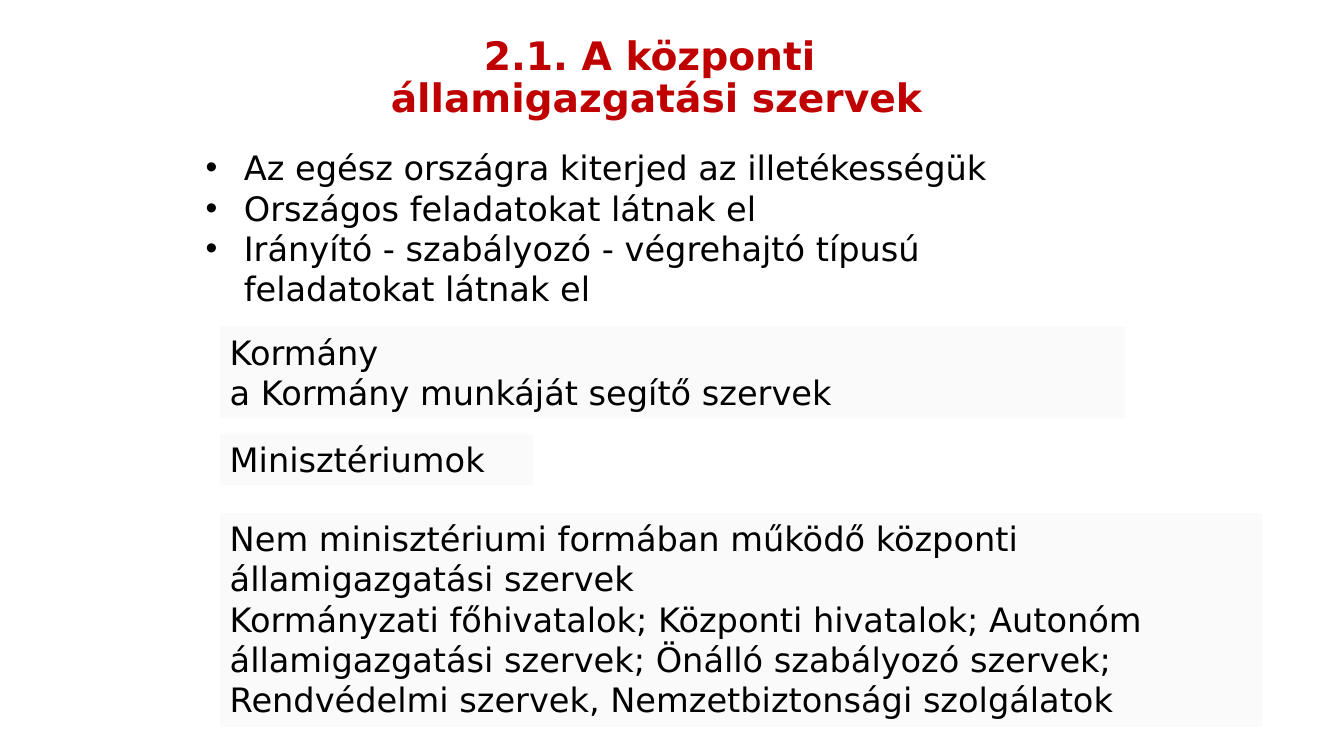
from lxml import etree
from pptx import Presentation
from pptx.dml.color import RGBColor
from pptx.enum.shapes import MSO_SHAPE
from pptx.enum.text import MSO_ANCHOR, MSO_AUTO_SIZE, PP_ALIGN
from pptx.oxml.ns import qn
from pptx.util import Inches, Pt

RECT = MSO_SHAPE.RECTANGLE
TOP, MIDDLE = MSO_ANCHOR.TOP, MSO_ANCHOR.MIDDLE
GROW = MSO_AUTO_SIZE.SHAPE_TO_FIT_TEXT
LEFT, CENTER = PP_ALIGN.LEFT, PP_ALIGN.CENTER
FONT = "DejaVu Sans"
RED, BLACK, PANEL = "C00000", "000000", "FAFAFA"

TITLE = ["2.1. A központi ", "államigazgatási szervek"]
FEATURES = [
    "Az egész országra kiterjed az illetékességük",
    "Országos feladatokat látnak el",
    "Irányító - szabályozó - végrehajtó típusú feladatokat látnak el",
]
PANEL_LEFT = 2.18
PANELS = [
    (3.24, 8.98, 0.91, ["Kormány", "a Kormány munkáját segítő szervek"]),
    (4.31, 3.11, 0.5, ["Minisztériumok"]),
    (5.09, 10.34, 2.12, [
        "Nem minisztériumi formában működő központi államigazgatási szervek",
        "Kormányzati főhivatalok; Központi hivatalok; Autonóm államigazgatási "
        "szervek; Önálló szabályozó szervek; Rendvédelmi szervek, "
        "Nemzetbiztonsági szolgálatok",
    ]),
]


def rgb(value):
    return RGBColor.from_string(value)


def write(shape, lines, size=24, color=BLACK, bold=False, align=LEFT, anchor=TOP):
    tf = shape.text_frame
    tf.word_wrap = True
    tf.vertical_anchor = anchor
    tf.text = "\n".join(lines)
    for p in tf.paragraphs:
        p.alignment = align
        for r in p.runs:
            r.font.name = FONT
            r.font.size = Pt(size)
            r.font.bold = bold
            r.font.color.rgb = rgb(color)
    return tf


def add_title(s, left, top, width, height):
    box = s.shapes.add_textbox(*map(Inches, (left, top, width, height)))
    tf = write(box, TITLE, 28, RED, True, CENTER, MIDDLE)
    for p in tf.paragraphs:
        p.line_spacing = 0.9


def add_features(s, left, top, width, height):
    box = s.shapes.add_textbox(*map(Inches, (left, top, width, height)))
    tf = write(box, FEATURES, anchor=MIDDLE)
    for p in tf.paragraphs:
        pPr = p._p.get_or_add_pPr()
        pPr.set("marL", str(Inches(0.38)))
        pPr.set("indent", str(-Inches(0.38)))
        etree.SubElement(pPr, qn("a:buFont")).set("typeface", "Arial")
        etree.SubElement(pPr, qn("a:buChar")).set("char", "•")


def add_panel(s, left, top, width, height, lines):
    sp = s.shapes.add_shape(RECT, *map(Inches, (left, top, width, height)))
    sp.shadow.inherit = False
    sp.fill.solid()
    sp.fill.fore_color.rgb = rgb(PANEL)
    sp.line.fill.background()
    write(sp, lines).auto_size = GROW


def main():
    prs = Presentation()
    prs.slide_width, prs.slide_height = Inches(13.33), Inches(7.5)
    s = prs.slides.add_slide(prs.slide_layouts[6])
    add_title(s, 1.67, 0.13, 9.68, 1.3)
    add_features(s, 1.94, 1.55, 8.98, 1.42)
    for top, width, height, lines in PANELS:
        add_panel(s, PANEL_LEFT, top, width, height, lines)
    prs.save("out.pptx")


if __name__ == "__main__":
    main()
